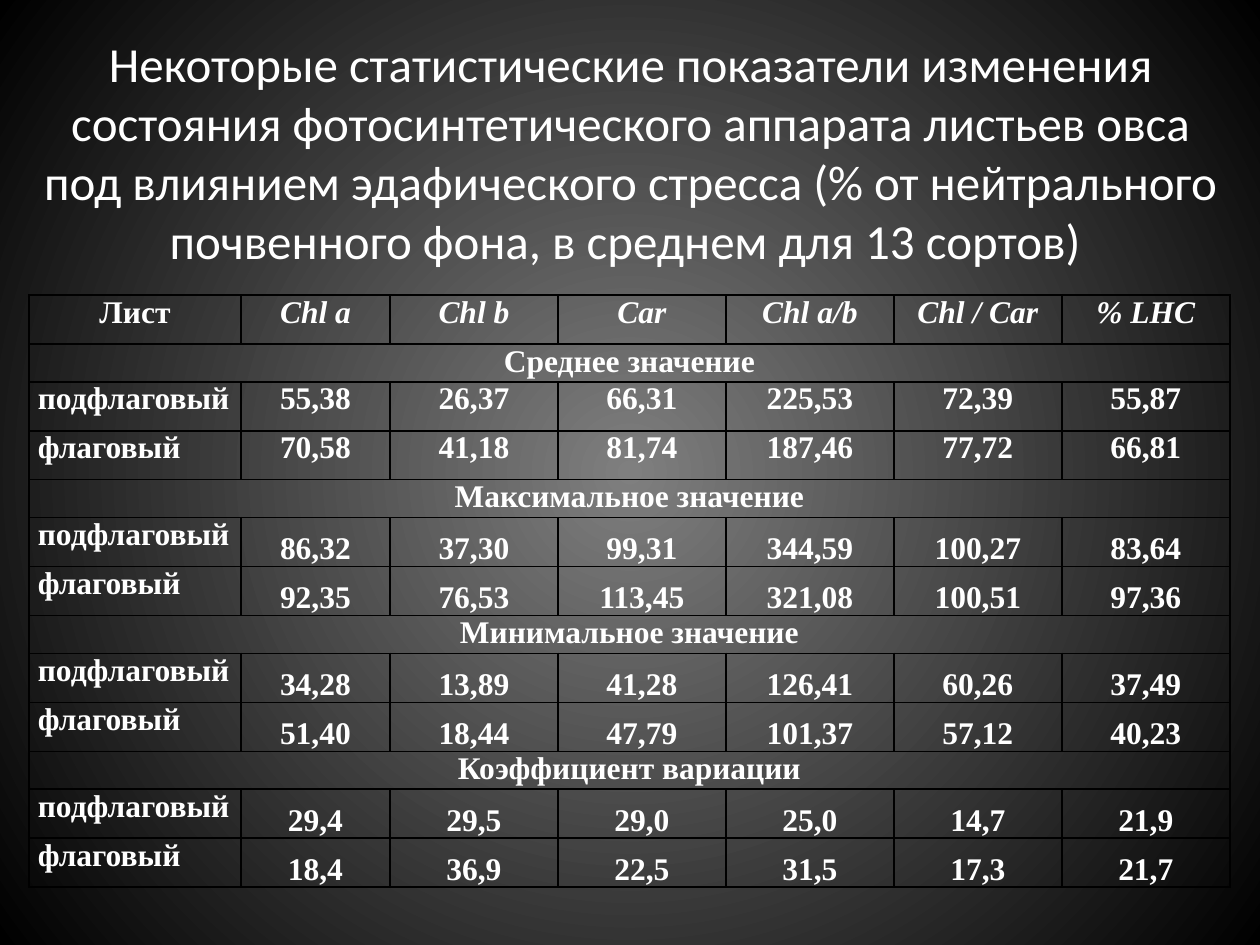
from pptx import Presentation, util as u
from pptx.dml.color import RGBColor
from pptx.enum import text
from pptx.oxml import parse_xml
from pptx.oxml.ns import nsdecls, qn

PX = 914400 // 126
COLORS = {"text": "FFFFFF", "border": "000000", "center": "7F7F7F", "edge": "000000"}

TITLE = (
    "Некоторые статистические показатели изменения состояния "
    "фотосинтетического аппарата листьев овса под влиянием эдафического "
    "стресса (% от нейтрального почвенного фона, в среднем для 13 сортов) "
)
HEADERS = ["Лист", "Chl a", "Chl b", "Car", "Chl a/b", "Chl / Car", "% LHC"]
LEAVES = ["подфлаговый", "флаговый"]
SECTIONS = [
    ("Среднее значение", [
        ["55,38", "26,37", "66,31", "225,53", "72,39", "55,87"],
        ["70,58", "41,18", "81,74", "187,46", "77,72", "66,81"],
    ]),
    ("Максимальное значение", [
        ["86,32", "37,30", "99,31", "344,59", "100,27", "83,64"],
        ["92,35", "76,53", "113,45", "321,08", "100,51", "97,36"],
    ]),
    ("Минимальное значение", [
        ["34,28", "13,89", "41,28", "126,41", "60,26", "37,49"],
        ["51,40", "18,44", "47,79", "101,37", "57,12", "40,23"],
    ]),
    ("Коэффициент вариации", [
        ["29,4", "29,5", "29,0", "25,0", "14,7", "21,9"],
        ["18,4", "36,9", "22,5", "31,5", "17,3", "21,7"],
    ]),
]
COLUMN_WIDTHS = [212, 149] + [168] * 5
ROW_HEIGHT, SECTION_HEIGHT = 49, 24
CENTER, JUSTIFY = text.PP_ALIGN.CENTER, text.PP_ALIGN.JUSTIFY
TOP, BOTTOM = text.MSO_ANCHOR.TOP, text.MSO_ANCHOR.BOTTOM


def px(*lengths):
    return [u.Emu(length * PX) for length in lengths]


def set_background(slide):
    """Fill the slide with a gradient that spreads from its centre."""
    fill = slide.background.fill
    fill.gradient()
    for stop, name in zip(fill.gradient_stops, ("center", "edge")):
        stop.color.rgb = RGBColor.from_string(COLORS[name])
    gradient = next(slide.element.iter(qn("a:gradFill")))
    gradient.replace(gradient.find(qn("a:lin")), parse_xml(
        f'<a:path {nsdecls("a")} path="circle">'
        '<a:fillToRect l="50000" t="50000" r="50000" b="50000"/></a:path>'
    ))


def add_text(paragraph, words, size, font_name, align, bold=False, italic=False):
    paragraph.alignment = align
    run = paragraph.add_run()
    run.text = words
    font = run.font
    font.size, font.name = u.Pt(size), font_name
    font.bold, font.italic = bold, italic
    font.color.rgb = RGBColor.from_string(COLORS["text"])


def add_title(slide):
    frame = slide.shapes.add_textbox(*px(25, 38, 1211, 227)).text_frame
    frame.word_wrap = True
    frame.vertical_anchor = text.MSO_ANCHOR.MIDDLE
    add_text(frame.paragraphs[0], TITLE, 28, "Calibri", CENTER)


def style_cell(cell):
    cell.margin_left = cell.margin_right = u.Inches(0.07)
    cell.margin_top = cell.margin_bottom = 0
    cell.fill.background()
    properties = cell._tc.get_or_add_tcPr()
    for index, side in enumerate("LRTB"):
        properties.insert(index, parse_xml(
            f'<a:ln{side} {nsdecls("a")} w="12700"><a:solidFill>'
            f'<a:srgbClr val="{COLORS["border"]}"/></a:solidFill></a:ln{side}>'
        ))


def fill_cell(cell, words, align=CENTER, anchor=TOP, italic=False):
    cell.vertical_anchor = anchor
    add_text(cell.text_frame.paragraphs[0], words, 18, "Times New Roman",
             align, bold=True, italic=italic)


def add_statistics_table(slide):
    section_rows = 1 + len(LEAVES)
    heights = [ROW_HEIGHT] + ([SECTION_HEIGHT] + [ROW_HEIGHT] * len(LEAVES)) * len(SECTIONS)
    frame = slide.shapes.add_table(
        len(heights), len(HEADERS),
        *px(29, 295, sum(COLUMN_WIDTHS), sum(heights)))
    table = frame.table
    table.first_row = table.horz_banding = False
    for column, width in zip(table.columns, px(*COLUMN_WIDTHS)):
        column.width = width
    for row, height in zip(table.rows, px(*heights)):
        row.height = height
    for cell in table.iter_cells():
        style_cell(cell)

    for column, header in enumerate(HEADERS):
        fill_cell(table.cell(0, column), header, italic=column > 0)
    for section, (heading, rows) in enumerate(SECTIONS):
        first = 1 + section * section_rows
        table.cell(first, 0).merge(table.cell(first, len(HEADERS) - 1))
        fill_cell(table.cell(first, 0), heading)
        anchor = BOTTOM if section else TOP
        for row, (leaf, values) in enumerate(zip(LEAVES, rows), first + 1):
            fill_cell(table.cell(row, 0), leaf, JUSTIFY)
            for column, value in enumerate(values, 1):
                fill_cell(table.cell(row, column), value, anchor=anchor)


def main():
    presentation = Presentation()
    presentation.slide_width, presentation.slide_height = px(1260, 945)
    slide = presentation.slides.add_slide(presentation.slide_layouts[6])
    set_background(slide)
    add_title(slide)
    add_statistics_table(slide)
    presentation.save("out.pptx")


if __name__ == "__main__":
    main()
